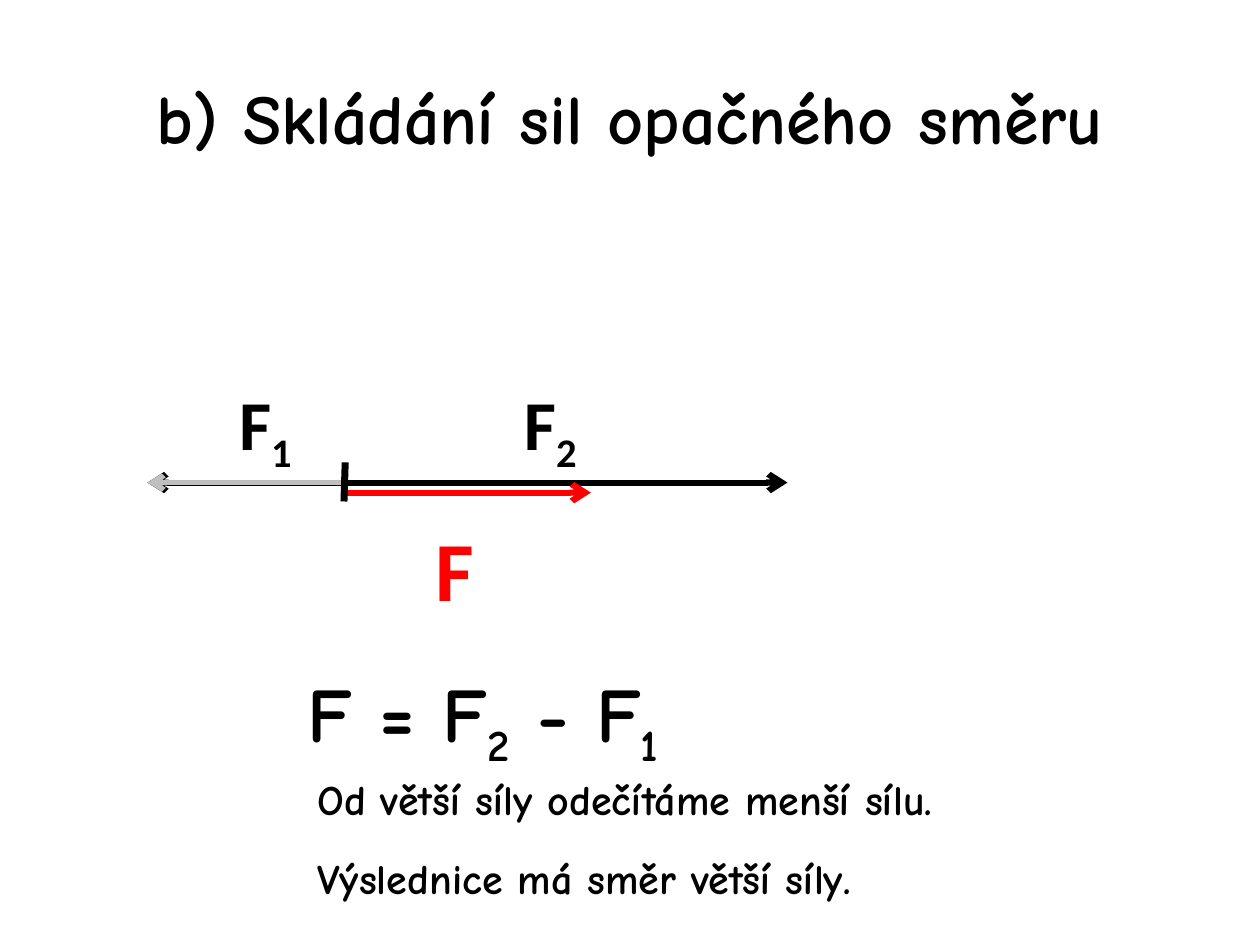
from dataclasses import dataclass

from lxml import etree
from pptx import Presentation
from pptx import util as u
from pptx.dml.color import RGBColor
from pptx.enum import shapes, text
from pptx.oxml import ns


@dataclass(frozen=True)
class Theme:
    hand: str = "Comic Neue"
    sans: str = "Calibri"
    black: str = "000000"
    grey: str = "BFBFBF"
    red: str = "FF0000"
    title: int = 40
    label: int = 40
    result: int = 48
    formula: int = 44
    note: int = 24


T = Theme()


def add_text(s, box, parts, size, font=T.hand, color=T.black, centered=False):
    """Add one bold line; every second part is a subscript."""
    sp = s.shapes.add_textbox(*map(u.Inches, box))
    tf = sp.text_frame
    tf.word_wrap = True
    p = tf.paragraphs[0]
    if centered:
        tf.vertical_anchor = text.MSO_ANCHOR.MIDDLE
        p.alignment = text.PP_ALIGN.CENTER
    p.font.name, p.font.size, p.font.bold = font, u.Pt(size), True
    p.font.color.rgb = RGBColor.from_string(color)
    for i, part in enumerate(parts):
        r = p.add_run()
        r.text = part
        if i % 2:
            r._r.get_or_add_rPr().set("baseline", "-25000")


def add_line(s, start, end, color=T.black, width=3.5, arrow=True):
    """Add a straight line, with an arrowhead at its end if wanted."""
    points = map(u.Inches, (*start, *end))
    c = s.shapes.add_connector(shapes.MSO_CONNECTOR.STRAIGHT, *points)
    c.line.color.rgb = RGBColor.from_string(color)
    c.line.width = u.Pt(width)
    if arrow:
        etree.SubElement(c.line._get_or_add_ln(), ns.qn("a:tailEnd"), type="arrow")
    etree.SubElement(c._element.spPr, ns.qn("a:effectLst"))


def add_forces(s):
    x, y = 2.73, 3.83
    # Force arrows, all starting at the same point of action
    add_line(s, (x, y), (1.17, y))
    add_line(s, (x, y), (6.25, y))
    add_line(s, (x, y), (1.17, y), T.grey, 3)
    add_line(s, (x, 3.91), (4.69, 3.91), T.red)
    add_line(s, (2.74, 3.67), (x, 3.98), width=4, arrow=False)
    # Force labels
    add_text(s, (1.8, 2.97, 0.7, 0.77), ["F", "1"], T.label, T.sans)
    add_text(s, (4.06, 2.97, 0.78, 0.77), ["F", "2"], T.label, T.sans)
    add_text(s, (3.36, 4.06, 0.63, 0.91), ["F"], T.result, T.sans, T.red)


def main():
    prs = Presentation()
    prs.slide_width, prs.slide_height = u.Inches(10), u.Inches(7.5)
    s = prs.slides.add_slide(prs.slide_layouts[6])

    # Title
    add_text(s, (0.5, 0.3, 9, 1.25), ["b) Skládání sil opačného směru"],
             T.title, centered=True)
    # Diagram
    add_forces(s)
    # Formula and its explanation
    add_text(s, (2.34, 5.23, 4.38, 0.84), ["F = F", "2", " - F", "1"], T.formula)
    add_text(s, (2.42, 6.09, 8.2, 0.5),
             ["Od větší síly odečítáme menší sílu."], T.note)
    add_text(s, (2.42, 6.72, 8.28, 0.5),
             ["Výslednice má směr větší síly."], T.note)

    prs.save("out.pptx")


if __name__ == "__main__":
    main()
